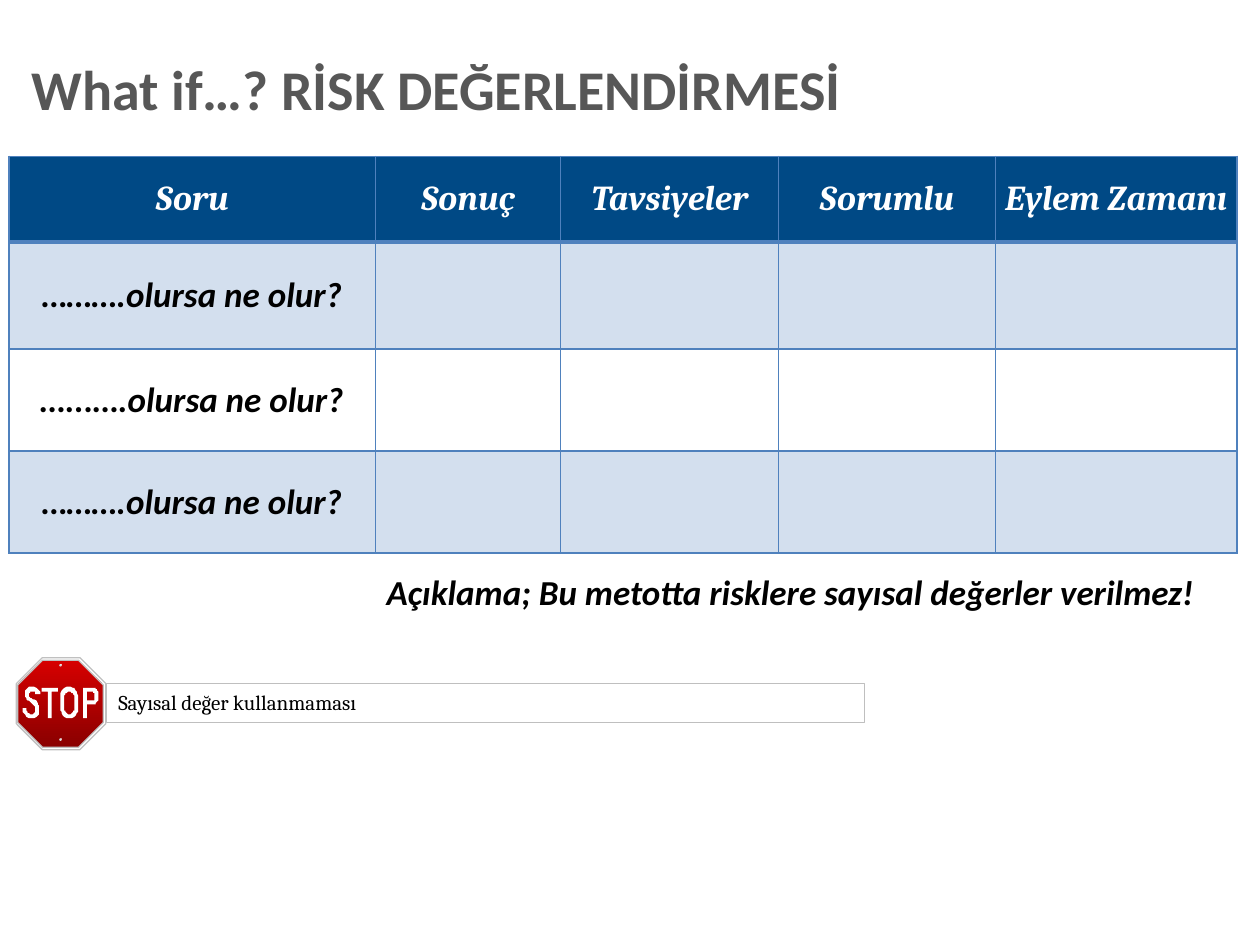
from typing import NamedTuple

from lxml import etree
from pptx import Presentation
from pptx import util as u
from pptx.dml.color import RGBColor
from pptx.enum import shapes, text
from pptx.oxml.ns import qn

NAVY, BLUE, PALE, WHITE, BLACK = "004985", "4F81BD", "D3DFEE", "FFFFFF", "000000"
SILVER = "C0C0C0"
SANS, SERIF = "Calibri", "Cambria"

COLUMNS = (2.91, 1.47, 1.73, 1.72, 1.92)
ROWS = (0.68, 0.85, 0.81, 0.81)
HEADERS = ("Soru", "Sonuç", "Tavsiyeler", "Sorumlu", "Eylem Zamanı")
QUESTIONS = ("……….olursa ne olur?", "…...….olursa ne olur?", "……….olursa ne olur?")


class Box(NamedTuple):
    left: float
    top: float
    width: float
    height: float

    def emu(self) -> tuple:
        return tuple(u.Inches(v) for v in self)


class Style(NamedTuple):
    size: float
    face: str
    color: str
    bold: bool = False
    italic: bool = False


class Oval(NamedTuple):
    box: Box
    color: str


# Letter contours in hundredths of an inch; a point pair is a line end,
# six numbers are a cubic curve.
LETTERS = (
    # S
    [[(28, 551), (32, 551), (32, 551, 32, 545, 25, 545), (19, 545, 20, 551, 20, 551),
      (20, 556, 24, 556, 26, 559), (27, 560, 28, 560, 28, 563),
      (28, 566, 26, 567, 25, 567), (23, 567, 21, 566, 21, 562), (18, 562),
      (18, 562, 18, 570, 25, 570), (32, 570, 31, 564, 31, 563),
      (31, 562, 32, 559, 27, 555), (24, 554, 23, 553, 23, 551),
      (23, 550, 24, 549, 25, 549), (27, 549, 28, 549, 28, 551)]],
    # T
    [[(38, 570), (38, 549), (33, 549), (33, 546), (46, 546), (46, 549), (41, 549),
      (41, 570)]],
    # O
    [[(55, 545), (48, 545, 48, 552, 48, 552), (48, 563), (48, 563, 49, 570, 55, 570),
      (62, 570, 62, 563, 62, 563), (62, 553), (62, 549, 59, 545, 55, 545)],
     [(59, 562), (59, 562, 59, 567, 55, 567), (52, 567, 51, 562, 51, 562), (51, 553),
      (51, 553, 51, 549, 55, 549), (57, 549, 59, 551, 59, 554)]],
    # P
    [[(77, 548), (77, 547, 76, 546, 75, 546), (66, 546), (66, 570), (69, 570),
      (69, 559), (75, 559), (77, 558, 78, 556, 78, 552), (78, 551, 78, 549, 77, 548)],
     [(74, 556), (69, 556), (69, 549), (73, 549), (74, 549, 75, 549, 75, 553),
      (75, 553, 75, 556, 74, 556)]],
)


def rgb(color: str) -> RGBColor:
    return RGBColor.from_string(color)


def write(tf, words: str, style: Style, align=text.PP_ALIGN.LEFT):
    p = tf.paragraphs[0]
    p.text = words
    p.alignment = align
    p.font.size, p.font.name = u.Pt(style.size), style.face
    p.font.bold, p.font.italic = style.bold, style.italic
    p.font.color.rgb = rgb(style.color)
    return p


def paint(sp, fill: str = "", line: str = "", weight: float = 0.75) -> None:
    sp.shadow.inherit = False
    if fill:
        sp.fill.solid()
        sp.fill.fore_color.rgb = rgb(fill)
    else:
        sp.fill.background()
    if line:
        sp.line.color.rgb = rgb(line)
        sp.line.width = u.Pt(weight)
    else:
        sp.line.fill.background()


def border(cell, top: float, bottom: float) -> None:
    tc_pr = cell._tc.get_or_add_tcPr()
    for side, weight in (("L", 1), ("R", 1), ("T", top), ("B", bottom)):
        ln = etree.SubElement(tc_pr, qn(f"a:ln{side}"), w=str(u.Pt(weight)))
        fill = etree.SubElement(ln, qn("a:solidFill"))
        etree.SubElement(fill, qn("a:srgbClr"), val=BLUE)


def add_risk_table(slide) -> None:
    box = Box(0.07, 1.24, sum(COLUMNS), sum(ROWS))
    table = slide.shapes.add_table(len(ROWS), len(COLUMNS), *box.emu()).table
    table.first_row = table.horz_banding = False
    for col, width in zip(table.columns, COLUMNS):
        col.width = u.Inches(width)
    words = [HEADERS] + [(q,) for q in QUESTIONS]
    for r, height in enumerate(ROWS):
        table.rows[r].height = u.Inches(height)
        style = Style(20, SANS if r else SERIF, BLACK if r else WHITE, True, True)
        for c in range(len(COLUMNS)):
            cell = table.cell(r, c)
            border(cell, 2.25 if r == 1 else 1, 2.25 if r == 0 else 1)
            if r == 2:
                cell.fill.background()
            else:
                cell.fill.solid()
                cell.fill.fore_color.rgb = rgb(PALE if r else NAVY)
            cell.margin_left = cell.margin_right = u.Inches(0.07)
            cell.margin_top = cell.margin_bottom = 0
            cell.vertical_anchor = text.MSO_ANCHOR.MIDDLE
            if c < len(words[r]):
                write(cell.text_frame, words[r][c], style, text.PP_ALIGN.CENTER)


def flatten(contour: list, steps: int = 8) -> list:
    """Turn a contour of lines and cubic curves into plain points."""
    points = [contour[0]]
    for seg in contour[1:]:
        if len(seg) == 2:
            points.append(seg)
            continue
        ctrl = (points[-1], seg[:2], seg[2:4], seg[4:])
        for t in (i / steps for i in range(1, steps + 1)):
            weights = ((1 - t) ** 3, 3 * t * (1 - t) ** 2, 3 * t * t * (1 - t), t ** 3)
            points.append(tuple(sum(w * pt[k] for w, pt in zip(weights, ctrl))
                                for k in (0, 1)))
    return points


def add_letter(group, contours: list) -> None:
    first, *holes = (flatten(c) for c in contours)
    builder = group.shapes.build_freeform(*first[0], scale=u.Inches(0.01))
    builder.add_line_segments(first[1:], close=True)
    for hole in holes:
        builder.move_to(*hole[0])
        builder.add_line_segments(hole[1:], close=True)
    paint(builder.convert_to_shape(), WHITE)


def add_stop_note(slide) -> None:
    group = slide.shapes.add_group_shape()
    kinds = shapes.MSO_SHAPE
    for box in (Box(0.13, 5.22, 0.71, 0.73), Box(0.14, 5.24, 0.68, 0.69)):
        sign = group.shapes.add_shape(kinds.OCTAGON, *box.emu())
        sign.adjustments[0] = 0.29
        paint(sign, WHITE, SILVER)
    sign.fill.gradient()
    sign.fill.gradient_angle = 270
    for stop, color in zip(sign.fill.gradient_stops, ("D60000", "8A0000")):
        stop.color.rgb = rgb(color)
    for letter in LETTERS:
        add_letter(group, letter)
    for top in (5.27, 5.86):
        for oval in (Oval(Box(0.47, top, 0.02, 0.02), "D2D2D2"),
                     Oval(Box(0.48, top, 0.01, 0.01), WHITE)):
            paint(group.shapes.add_shape(kinds.OVAL, *oval.box.emu()), oval.color)
    note = group.shapes.add_shape(kinds.RECTANGLE, *Box(0.84, 5.42, 6.02, 0.31).emu())
    paint(note, line="BFBFBF", weight=0.25)
    note.text_frame.vertical_anchor = text.MSO_ANCHOR.MIDDLE
    write(note.text_frame, "Sayısal değer kullanmaması", Style(12, SERIF, BLACK))


def main() -> None:
    prs = Presentation()
    prs.slide_width, prs.slide_height = u.Inches(10), u.Inches(7.5)
    slide = prs.slides.add_slide(prs.slide_layouts[5])

    title = slide.shapes.title
    title.left, title.top, title.width, title.height = Box(0.25, 0.38, 9.64, 0.71).emu()
    tf = title.text_frame
    tf.auto_size = text.MSO_AUTO_SIZE.NONE
    tf.vertical_anchor = text.MSO_ANCHOR.MIDDLE
    tf.margin_left = tf.margin_right = 0
    p = write(tf, "What if…? RİSK DEĞERLENDİRMESİ", Style(32, SANS, "575757", True))
    p.line_spacing = 0.9

    add_risk_table(slide)

    tf = slide.shapes.add_textbox(*Box(2.97, 4.48, 6.79, 0.44).emu()).text_frame
    tf.word_wrap = True
    tf.auto_size = text.MSO_AUTO_SIZE.SHAPE_TO_FIT_TEXT
    write(tf, "Açıklama; Bu metotta risklere sayısal değerler verilmez!",
          Style(20, SANS, BLACK, True, True))

    add_stop_note(slide)
    prs.save("out.pptx")


if __name__ == "__main__":
    main()
